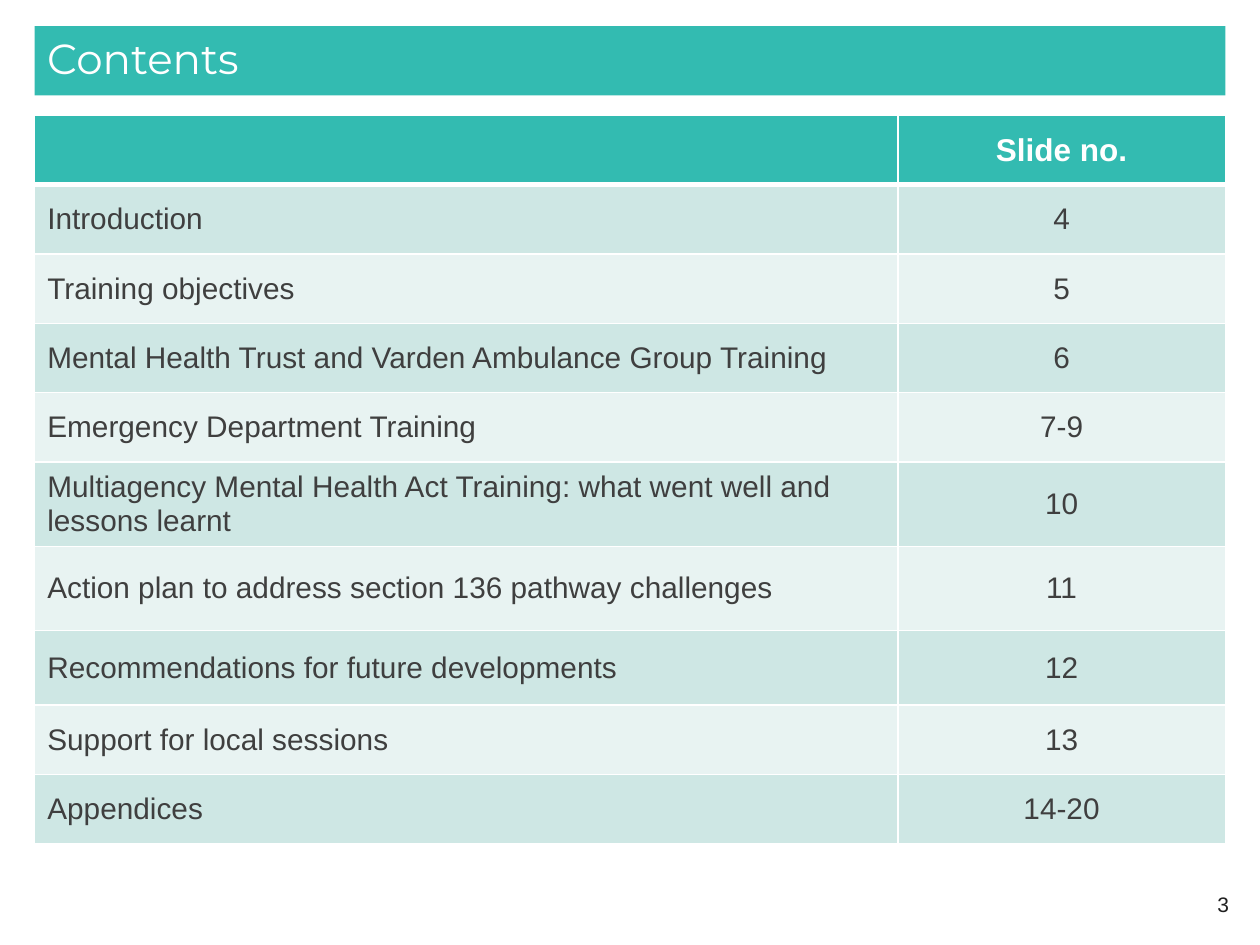
from lxml import etree
from pptx import Presentation
from pptx import util as u
from pptx.dml import color
from pptx.enum import shapes, text
from pptx.oxml import ns

TEAL, WHITE, INK, NUMBER_INK = "33BBB1", "FFFFFF", "3F3F3F", "202020"
BANDS = ("CEE7E4", "E8F3F2")
LEFT, CENTER, RIGHT = text.PP_ALIGN.LEFT, text.PP_ALIGN.CENTER, text.PP_ALIGN.RIGHT
ROW_HEIGHT = 39.6
CONTENTS = [
    ("Introduction", "4", ROW_HEIGHT),
    ("Training objectives", "5", ROW_HEIGHT),
    ("Mental Health Trust and Varden Ambulance Group Training", "6", ROW_HEIGHT),
    ("Emergency Department Training", "7-9", ROW_HEIGHT),
    ("Multiagency Mental Health Act Training: what went well and lessons learnt", "10", 48.2),
    ("Action plan to address section 136 pathway challenges", "11", 48.2),
    ("Recommendations for future developments", "12", 42.5),
    ("Support for local sessions", "13", ROW_HEIGHT),
    ("Appendices", "14-20", ROW_HEIGHT),
]


def rgb(value):
    """Turn a hex string into a colour."""
    return color.RGBColor.from_string(value)


def fill(target, value):
    """Give a shape or cell a solid fill."""
    target.fill.solid()
    target.fill.fore_color.rgb = rgb(value)


def write(frame, words, ink, align, **formats):
    """Write one paragraph with the given font values."""
    line = frame.paragraphs[0]
    line.alignment = align
    run = line.add_run()
    run.text = words
    run.font.color.rgb = rgb(ink)
    for key, value in formats.items():
        setattr(run.font, key, value)


def border(cell, bottom=1, top=1):
    """Draw white borders on the four sides of a cell."""
    properties = cell._tc.get_or_add_tcPr()
    for side, width in {"L": 1, "R": 1, "T": top, "B": bottom}.items():
        edge = etree.SubElement(properties, ns.qn(f"a:ln{side}"), w=str(u.Pt(width)))
        solid = etree.SubElement(edge, ns.qn("a:solidFill"))
        etree.SubElement(solid, ns.qn("a:srgbClr"), val=WHITE)


def add_title(slide, box):
    """Place the heading bar."""
    bar = slide.shapes.add_shape(shapes.MSO_SHAPE.RECTANGLE, *map(u.Pt, box))
    bar.shadow.inherit = False
    bar.line.fill.background()
    fill(bar, TEAL)
    bar.text_frame.vertical_anchor = text.MSO_ANCHOR.MIDDLE
    bar.text_frame.margin_bottom = u.Pt(7)
    write(bar.text_frame, "Contents", WHITE, LEFT, size=u.Pt(24), name="Montserrat")


def add_contents(slide, box):
    """Place the contents table, with banded rows under its header."""
    rows = [("", "Slide no.", ROW_HEIGHT), *CONTENTS]
    table = slide.shapes.add_table(len(rows), 2, *map(u.Pt, box)).table
    number_width = 187.2
    for column, width in zip(table.columns, (box[2] - number_width, number_width)):
        column.width = u.Pt(width)
    for index, (topic, number, height) in enumerate(rows):
        header = index == 0
        table.rows[index].height = u.Pt(height)
        for cell, words, align in zip(table.rows[index].cells, (topic, number), (LEFT, CENTER)):
            border(cell, bottom=3 if header else 1, top=3 if index == 1 else 1)
            fill(cell, TEAL if header else BANDS[(index - 1) % 2])
            cell.vertical_anchor = text.MSO_ANCHOR.MIDDLE
            if words:
                write(cell.text_frame, words, WHITE if header else INK, align,
                      size=u.Pt(18 if header else 17), name="Arial", bold=header)


def add_slide_number(slide, box):
    """Place the slide number at the lower right."""
    frame = slide.shapes.add_textbox(*map(u.Pt, box)).text_frame
    frame.word_wrap = True
    frame.vertical_anchor = text.MSO_ANCHOR.MIDDLE
    write(frame, "3", NUMBER_INK, RIGHT, size=u.Pt(12), name="Arial")


def main():
    """Build and save the contents slide."""
    deck = Presentation()
    deck.slide_width, deck.slide_height = u.Pt(720), u.Pt(540)
    slide = deck.slides.add_slide(deck.slide_layouts[6])
    add_title(slide, (19.8, 15, 680.4, 39.6))
    add_slide_number(slide, (541.4, 502.4, 168, 28.8))
    add_contents(slide, (19.8, 66, 680.4, 416.1))
    deck.save("out.pptx")


if __name__ == "__main__":
    main()
